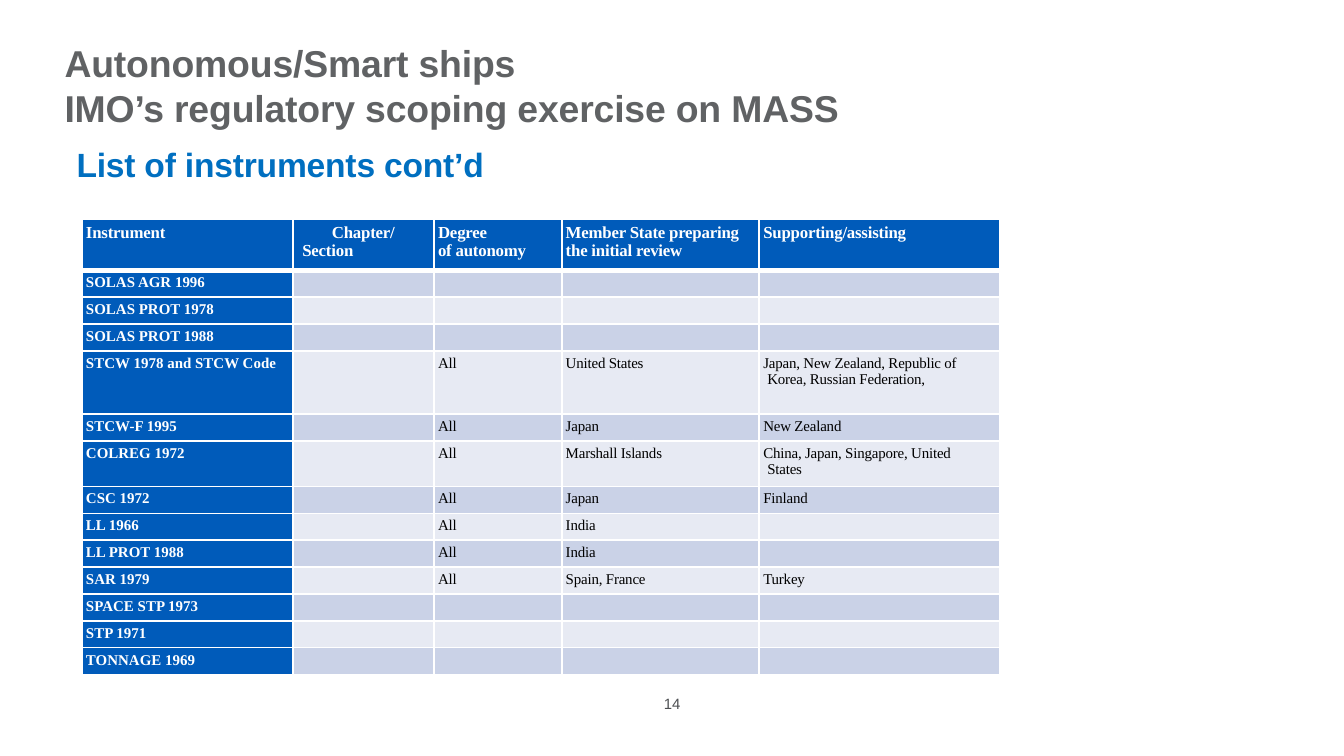
import pptx
import pptx.dml.color
import pptx.enum.text
import pptx.oxml
import pptx.oxml.ns
import pptx.util
from pptx.util import Inches

TITLE = ["Autonomous/Smart ships", "IMO’s regulatory scoping exercise on MASS"]
SUBHEAD = "List of instruments cont’d"
NUMBER = "14"

# A \v is a line break inside a cell.
HEADS = ["Instrument", "Chapter/\vSection", "Degree\vof autonomy",
         "Member State preparing\vthe initial review", "Supporting/assisting"]
# Instrument, degree, member state, support, row height
ROWS = [
    ("SOLAS AGR 1996", "", "", "", 0.2),
    ("SOLAS PROT 1978", "", "", "", 0.2),
    ("SOLAS PROT 1988", "", "", "", 0.2),
    ("STCW 1978 and STCW Code", "All", "United States",
     "Japan, New Zealand, Republic of\vKorea, Russian Federation,", 0.47),
    ("STCW-F 1995", "All", "Japan", "New Zealand", 0.2),
    ("COLREG 1972", "All", "Marshall Islands",
     "China, Japan, Singapore, United\vStates", 0.34),
    ("CSC 1972", "All", "Japan", "Finland", 0.2),
    ("LL 1966", "All", "India", "", 0.2),
    ("LL PROT 1988", "All", "India", "", 0.2),
    ("SAR 1979", "All", "Spain, France", "Turkey", 0.2),
    ("SPACE STP 1973", "", "", "", 0.2),
    ("STP 1971", "", "", "", 0.2),
    ("TONNAGE 1969", "", "", "", 0.2),
]
WIDTHS = [1.57, 1.05, 0.95, 1.47, 1.79]
HEAD_HEIGHT = 0.38

COLORS = {"title": "606264", "subhead": "006FC0", "number": "4D4F52",
          "blue": "005BBA", "dark": "CAD2E7", "light": "E7EAF3",
          "white": "FFFFFF", "black": "000000"}
SANS, SERIF = "Arial", "Times New Roman"
FORMATS = {
    "title": {"name": SANS, "size": 20, "bold": True, "color": "title"},
    "subhead": {"name": SANS, "size": 18, "bold": True, "color": "subhead"},
    "number": {"name": SANS, "size": 8, "bold": False, "color": "number"},
    "head": {"name": SERIF, "size": 9, "bold": True, "color": "white"},
    "label": {"name": SERIF, "size": 8, "bold": True, "color": "white"},
    "cell": {"name": SERIF, "size": 8, "bold": False, "color": "black"},
}
TIGHT = ("title", "subhead", "head", "cell")


def paint(name):
    return pptx.dml.color.RGBColor.from_string(COLORS[name])


def style(run, kind):
    for key, value in FORMATS[kind].items():
        if key == "color":
            run.font.color.rgb = paint(value)
        else:
            setattr(run.font, key,
                    pptx.util.Pt(value) if key == "size" else value)
    if kind in TIGHT:
        run._r.get_or_add_rPr().set("spc", "-10")


def indent(para, left, first=0):
    props = para._p.get_or_add_pPr()
    props.set("marL", str(Inches(left)))
    props.set("indent", str(Inches(first)))


def write(frame, lines, kind, left=0.01):
    """Fill a frame with one paragraph per line."""
    for i, line in enumerate(lines):
        para = frame.add_paragraph() if i else frame.paragraphs[0]
        para.text = line
        para.alignment = pptx.enum.text.PP_ALIGN.LEFT
        para.space_before = pptx.util.Pt(0)
        indent(para, left)
        for run in para.runs:
            style(run, kind)


def set_frame(frame, top):
    values = {"margin_left": 0, "margin_right": 0, "margin_bottom": 0,
              "margin_top": Inches(top), "word_wrap": True,
              "auto_size": pptx.enum.text.MSO_AUTO_SIZE.NONE,
              "vertical_anchor": pptx.enum.text.MSO_ANCHOR.TOP}
    for key, value in values.items():
        setattr(frame, key, value)


def add_label(slide, spot, text, kind, left=0.01):
    box = slide.shapes.add_textbox(*map(Inches, spot))
    set_frame(box.text_frame, 0.01)
    write(box.text_frame, [text], kind, left)


def add_edges(cell, thick):
    """Draw white borders; thick names the sides that are 3 points wide."""
    props = cell._tc.get_or_add_tcPr()
    for side in "LRTB":
        width = pptx.util.Pt(3 if side in thick else 1)
        props.append(pptx.oxml.parse_xml(
            f'<a:ln{side} {pptx.oxml.ns.nsdecls("a")} w="{width}"><a:solidFill>'
            f'<a:srgbClr val="{COLORS["white"]}"/></a:solidFill></a:ln{side}>'))


def fill_cell(cell, text, kind, fill, thick):
    add_edges(cell, thick)
    cell.fill.solid()
    cell.fill.fore_color.rgb = paint(fill)
    for side in ("left", "right", "bottom"):
        setattr(cell, "margin_" + side, 0)
    cell.margin_top = Inches(0.03)
    para = cell.text_frame.paragraphs[0]
    if not text:
        size = FORMATS[kind]["size"] * 100
        para._p.append(pptx.oxml.parse_xml(
            f'<a:endParaRPr {pptx.oxml.ns.nsdecls("a")} sz="{size}"/>'))
        return
    write(cell.text_frame, [text], kind, 0.03)
    if text.startswith("Chapter"):
        indent(para, 0.07, 0.22)
    elif kind == "cell" and "\v" in text:
        indent(para, 0.06, -0.03)


def add_grid(slide):
    heights = [HEAD_HEIGHT] + [row[-1] for row in ROWS]
    spot = (0.61, 1.63, sum(WIDTHS), sum(heights))
    table = slide.shapes.add_table(
        len(heights), len(WIDTHS), *map(Inches, spot)).table
    for col, width in zip(table.columns, WIDTHS):
        col.width = Inches(width)
    for row, height in zip(table.rows, heights):
        row.height = Inches(height)
    for c, text in enumerate(HEADS):
        fill_cell(table.cell(0, c), text, "head", "blue", "B")
    for r, (label, degree, state, support, _) in enumerate(ROWS, 1):
        band = "dark" if r % 2 else "light"
        for c, text in enumerate([label, "", degree, state, support]):
            kind, fill = ("cell", band) if c else ("label", "blue")
            fill_cell(table.cell(r, c), text, kind, fill,
                      "T" if r == 1 else "")


def main():
    deck = pptx.Presentation()
    deck.slide_width = Inches(10)
    deck.slide_height = deck.slide_width * 9 // 16
    slide = deck.slides.add_slide(deck.slide_layouts[5])
    title = slide.shapes.title
    spot = {"left": 0.47, "top": 0.28, "width": 5.9, "height": 0.7}
    for key, value in spot.items():
        setattr(title, key, Inches(value))
    set_frame(title.text_frame, 0.02)
    write(title.text_frame, TITLE, "title")
    add_label(slide, (0.56, 1.06, 3.1, 0.33), SUBHEAD, "subhead")
    add_grid(slide)
    add_label(slide, (4.91, 5.16, 0.18, 0.15), NUMBER, "number", 0.03)
    deck.save("out.pptx")


if __name__ == "__main__":
    main()
